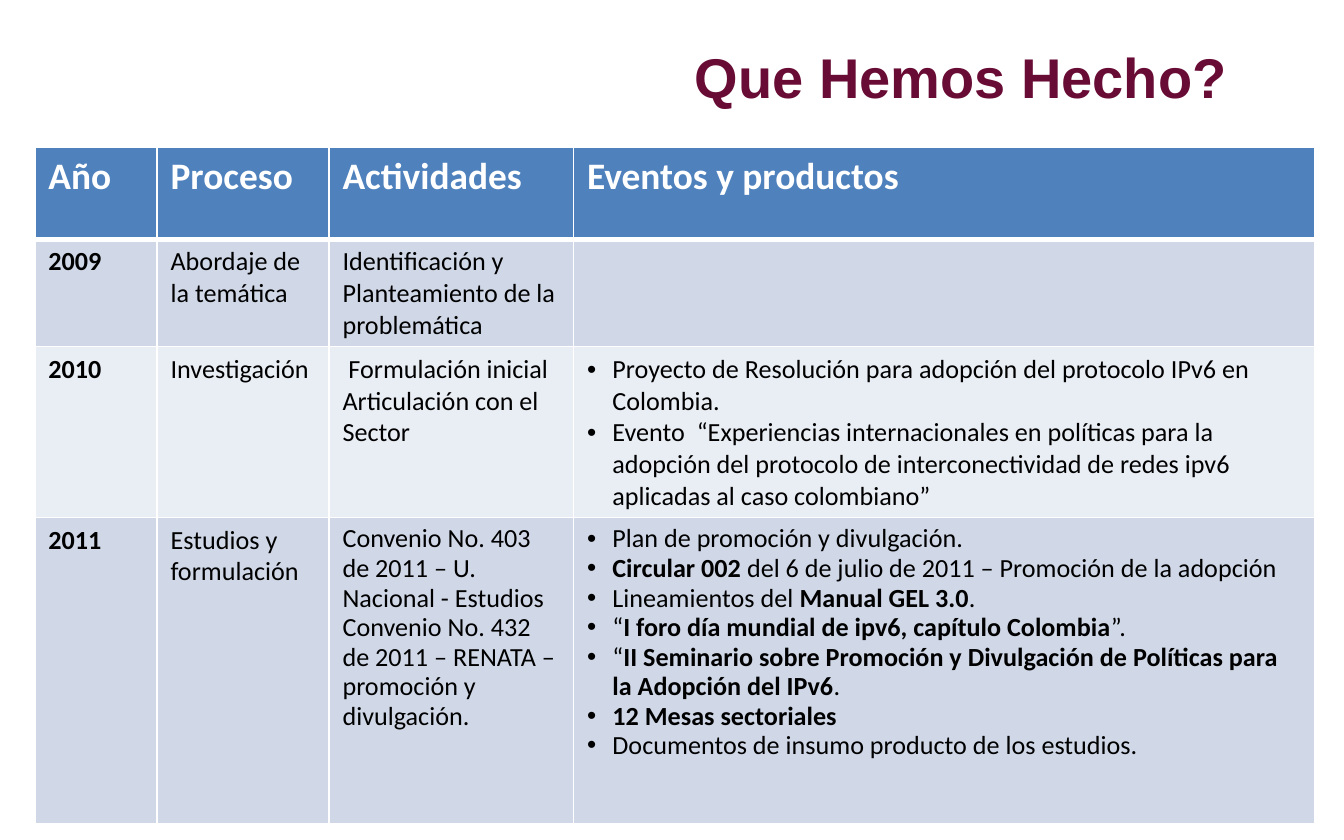
from dataclasses import dataclass

from lxml.etree import SubElement
from pptx import Presentation
from pptx.dml.color import RGBColor
from pptx.enum.text import MSO_AUTO_SIZE, PP_ALIGN
from pptx.oxml.ns import qn
from pptx.util import Cm, Pt


@dataclass(frozen=True)
class Theme:
    title: str = "680B35"
    head: str = "4F81BD"
    bands: tuple = ("D0D8E8", "E9EDF4")
    light: str = "FFFFFF"
    dark: str = "000000"
    title_font: str = "Arial"
    font: str = "Calibri"
    title_size: int = 30
    head_size: int = 20
    size: int = 14


THEME = Theme()
WIDTHS = (2.31, 3.25, 4.62, 14)
HEIGHTS = (1.73, 2.03, 3.23, 5.79)
TIGHT = 0.93

# Each cell is a list of paragraphs; ** switches bold on and off.
ROWS = (
    (["**Año"], ["**Proceso"], ["**Actividades"], ["**Eventos y productos"]),
    (["**2009"], ["Abordaje de la temática"],
     ["Identificación y Planteamiento de la problemática"], []),
    (["**2010"], ["Investigación"],
     [" Formulación inicial \vArticulación con el Sector"],
     ["Proyecto de Resolución para adopción del protocolo IPv6 en Colombia.",
      "Evento  “Experiencias internacionales en políticas para la adopción del "
      "protocolo de interconectividad de redes ipv6 aplicadas al caso "
      "colombiano”"]),
    (["**2011"], ["Estudios y formulación"],
     ["Convenio No. 403 de 2011 – U. Nacional - Estudios",
      "Convenio No. 432 de 2011 – RENATA – promoción y divulgación."],
     ["Plan de promoción y divulgación.",
      "**Circular 002 **del 6 de julio de 2011 – Promoción de la adopción",
      "Lineamientos del **Manual GEL 3.0**.",
      "“**I foro día mundial de ipv6, capítulo Colombia**”.",
      "“**II Seminario sobre Promoción y Divulgación de Políticas para la "
      "Adopción del IPv6**.",
      "**12 Mesas sectoriales",
      "Documentos de insumo producto de los estudios."]),
)


def style(run, font, size, color, bold):
    run.font.name = font
    run.font.size = Pt(size)
    run.font.color.rgb = RGBColor.from_string(color)
    run.font.bold = bold


def add_bullet(para):
    props = para._p.get_or_add_pPr()
    props.set("marL", str(Cm(0.48)))
    props.set("indent", str(Cm(-0.48)))
    SubElement(props, qn("a:buFont"), typeface=THEME.title_font)
    SubElement(props, qn("a:buChar"), char="•")


def write(para, text, size, color):
    """Fill a paragraph, with bold in every second part between ** marks."""
    first, *rest = text.split("**")
    para.text = first
    for run in para.runs:
        style(run, THEME.font, size, color, False)
    for i, part in enumerate(rest):
        run = para.add_run()
        run.text = part
        style(run, THEME.font, size, color, i % 2 == 0)


def add_edges(cell, top, bottom):
    props = cell._tc.get_or_add_tcPr()
    for side, width in (("L", 1), ("R", 1), ("T", top), ("B", bottom)):
        line = SubElement(props, qn(f"a:ln{side}"), w=str(Pt(width)))
        fill = SubElement(line, qn("a:solidFill"))
        SubElement(fill, qn("a:srgbClr"), val=THEME.light)


def fill_cell(cell, texts, row, col):
    head = row == 0
    add_edges(cell, 3 if row == 1 else 1, 3 if head else 1)
    cell.fill.solid()
    back = THEME.head if head else THEME.bands[(row - 1) % 2]
    cell.fill.fore_color.rgb = RGBColor.from_string(back)
    size = THEME.head_size if head else THEME.size
    color = THEME.light if head else THEME.dark
    frame = cell.text_frame
    for i, text in enumerate(texts):
        para = frame.add_paragraph() if i else frame.paragraphs[0]
        if not head and col == 3:
            add_bullet(para)
        if row == 3 and col > 1:
            para.line_spacing = TIGHT
        write(para, text, size, color)


def add_grid(slide):
    table = slide.shapes.add_table(
        len(ROWS), len(WIDTHS), Cm(0.66), Cm(2.79),
        Cm(sum(WIDTHS)), Cm(sum(HEIGHTS))).table
    for column, width in zip(table.columns, WIDTHS):
        column.width = Cm(width)
    for row, height in zip(table.rows, HEIGHTS):
        row.height = Cm(height)
    for r, cells in enumerate(ROWS):
        for c, texts in enumerate(cells):
            fill_cell(table.cell(r, c), texts, r, c)


def add_title(slide, text):
    box = slide.shapes.add_textbox(Cm(10.92), Cm(1.02), Cm(14.48), Cm(1.17))
    frame = box.text_frame
    frame.word_wrap = True
    frame.auto_size = MSO_AUTO_SIZE.SHAPE_TO_FIT_TEXT
    frame.text = text
    para = frame.paragraphs[0]
    para.alignment = PP_ALIGN.CENTER
    para.line_spacing = 0.7
    style(para.runs[0], THEME.title_font, THEME.title_size, THEME.title, True)


def main():
    deck = Presentation()
    deck.slide_width, deck.slide_height = Cm(25.4), Cm(15.88)
    slide = deck.slides.add_slide(deck.slide_layouts[6])
    add_title(slide, "Que Hemos Hecho?")
    add_grid(slide)
    deck.save("out.pptx")


if __name__ == "__main__":
    main()
